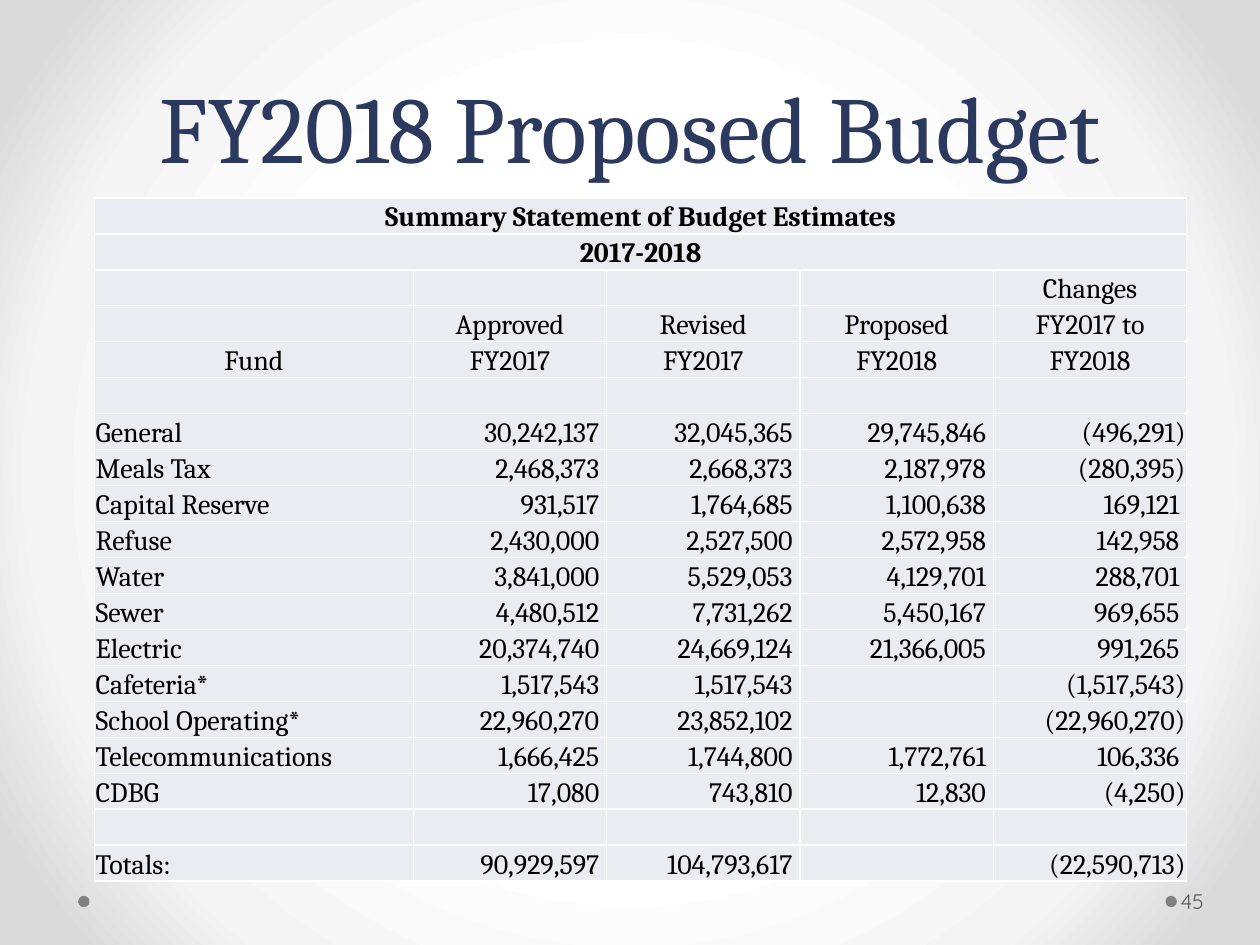
from lxml import etree
from pptx import Presentation
from pptx.dml.color import RGBColor
from pptx.enum import shapes, text
from pptx.oxml import parse_xml
from pptx.oxml.ns import nsdecls, qn
from pptx.util import Inches, Pt

SERIF = "Cambria"
LEFT, CENTER, RIGHT = text.PP_ALIGN.LEFT, text.PP_ALIGN.CENTER, text.PP_ALIGN.RIGHT
COLUMN_WIDTHS = [2.53] + [1.535] * 4
TABLE_HEIGHT = 5.43

TITLES = ["Summary Statement of Budget Estimates", "2017-2018"]
HEADINGS = [
    ["", "", "", "", "Changes"],
    ["", "Approved", "Revised", "Proposed", "FY2017 to"],
    ["Fund", "FY2017", "FY2017", "FY2018", "FY2018"],
]
BLANK = [""] + [None] * 4
FUNDS = [
    BLANK,
    ["General", 30242137, 32045365, 29745846, -496291],
    ["Meals Tax", 2468373, 2668373, 2187978, -280395],
    ["Capital Reserve", 931517, 1764685, 1100638, 169121],
    ["Refuse", 2430000, 2527500, 2572958, 142958],
    ["Water", 3841000, 5529053, 4129701, 288701],
    ["Sewer", 4480512, 7731262, 5450167, 969655],
    ["Electric", 20374740, 24669124, 21366005, 991265],
    ["Cafeteria*", 1517543, 1517543, None, -1517543],
    ["School Operating*", 22960270, 23852102, None, -22960270],
    ["Telecommunications", 1666425, 1744800, 1772761, 106336],
    ["CDBG", 17080, 743810, 12830, -4250],
    BLANK,
    ["Totals:", 90929597, 104793617, None, -22590713],
]


def rgb(value):
    return RGBColor.from_string(value)


def accounting(amount):
    """Negatives go in brackets; positives leave room for the closing one."""
    if amount is None:
        return ""
    return f"({-amount:,})" if amount < 0 else f"{amount:,} "


def set_background(page):
    stops = [(50, "FFFFFF"), (76, "F4F4F4"), (92, "DADADA")]
    stop_xml = "".join(
        f'<a:gs pos="{at * 1000}"><a:srgbClr val="{color}"/></a:gs>'
        for at, color in stops)
    background = parse_xml(
        f'<p:bg {nsdecls("p", "a")}><p:bgPr><a:gradFill rotWithShape="1">'
        f'<a:gsLst>{stop_xml}</a:gsLst><a:path path="circle">'
        '<a:fillToRect l="50000" t="50000" r="50000" b="50000"/></a:path>'
        '</a:gradFill><a:effectLst/></p:bgPr></p:bg>')
    page._element.cSld.insert(0, background)


def style(para, size, font, color, align=LEFT, bold=False):
    para.alignment = align
    para.font.size = Pt(size)
    para.font.name = font
    para.font.color.rgb = rgb(color)
    para.font.bold = bold


def add_text(page, at, words, anchor, size, font, color, align=LEFT, left_inset=0.1):
    box = page.shapes.add_textbox(*map(Inches, at))
    frame = box.text_frame
    frame.word_wrap = True
    frame.vertical_anchor = anchor
    frame.margin_left = Inches(left_inset)
    para = frame.paragraphs[0]
    para.text = words
    style(para, size, font, color, align)
    return box


def add_dot(page, left):
    dot = page.shapes.add_shape(
        shapes.MSO_SHAPE.OVAL, Inches(left), Inches(7.11), Inches(0.09), Inches(0.09))
    dot.shadow.inherit = False
    dot.fill.solid()
    dot.fill.fore_color.rgb = rgb("808080")
    dot.line.fill.background()


def set_borders(cell, color):
    properties = cell._tc.get_or_add_tcPr()
    for index, side in enumerate(["lnL", "lnR", "lnT", "lnB"]):
        properties.insert(index, parse_xml(
            f'<a:{side} {nsdecls("a")} w="{Pt(1)}"><a:solidFill>'
            f'<a:srgbClr val="{color}"/></a:solidFill></a:{side}>'))


def fill_cell(cell, words, align, bold=False):
    cell.fill.solid()
    cell.fill.fore_color.rgb = rgb("EAECF2")
    set_borders(cell, "FFFFFF")
    cell.vertical_anchor = text.MSO_ANCHOR.BOTTOM
    cell.margin_left = cell.margin_right = cell.margin_top = Inches(0.01)
    cell.margin_bottom = 0
    para = cell.text_frame.paragraphs[0]
    style(para, 16, SERIF, "000000", align, bold)
    if words:
        para.text = words
    else:  # keeps an empty cell from stretching its row
        etree.SubElement(para._p, qn("a:endParaRPr"), sz="1600")


def add_budget_table(page):
    rows = [[title, "", "", "", ""] for title in TITLES] + HEADINGS + [
        [fund] + [accounting(amount) for amount in amounts]
        for fund, *amounts in FUNDS]
    header_rows = len(TITLES) + len(HEADINGS)
    table = page.shapes.add_table(
        len(rows), len(COLUMN_WIDTHS), Inches(0.75), Inches(1.57),
        Inches(sum(COLUMN_WIDTHS)), Inches(TABLE_HEIGHT)).table
    table.first_row = table.horz_banding = False
    for column, width in zip(table.columns, COLUMN_WIDTHS):
        column.width = Inches(width)
    for r, row in enumerate(rows):
        table.rows[r].height = Inches(TABLE_HEIGHT / len(rows))
        for c, words in enumerate(row):
            align = CENTER if r < header_rows else RIGHT if c else LEFT
            fill_cell(table.cell(r, c), words, align, bold=r < len(TITLES))
    for r in range(len(TITLES)):
        table.cell(r, 0).merge(table.cell(r, len(COLUMN_WIDTHS) - 1))


def main():
    deck = Presentation()
    deck.slide_width, deck.slide_height = Inches(10), Inches(7.5)
    page = deck.slides.add_slide(deck.slide_layouts[6])
    set_background(page)
    for left in (9.25, 0.62):
        add_dot(page, left)
    title = add_text(page, (0.5, 0, 9, 1.5), "FY2018 Proposed Budget",
                     text.MSO_ANCHOR.BOTTOM, 54, SERIF, "2C395E", CENTER)
    title.text_frame.paragraphs[0].line_spacing = Pt(58)
    add_text(page, (9.34, 6.95, 0.61, 0.4), "45",
             text.MSO_ANCHOR.MIDDLE, 12, "Quicksand", "595959", left_inset=0.03)
    add_budget_table(page)
    deck.save("out.pptx")


if __name__ == "__main__":
    main()
